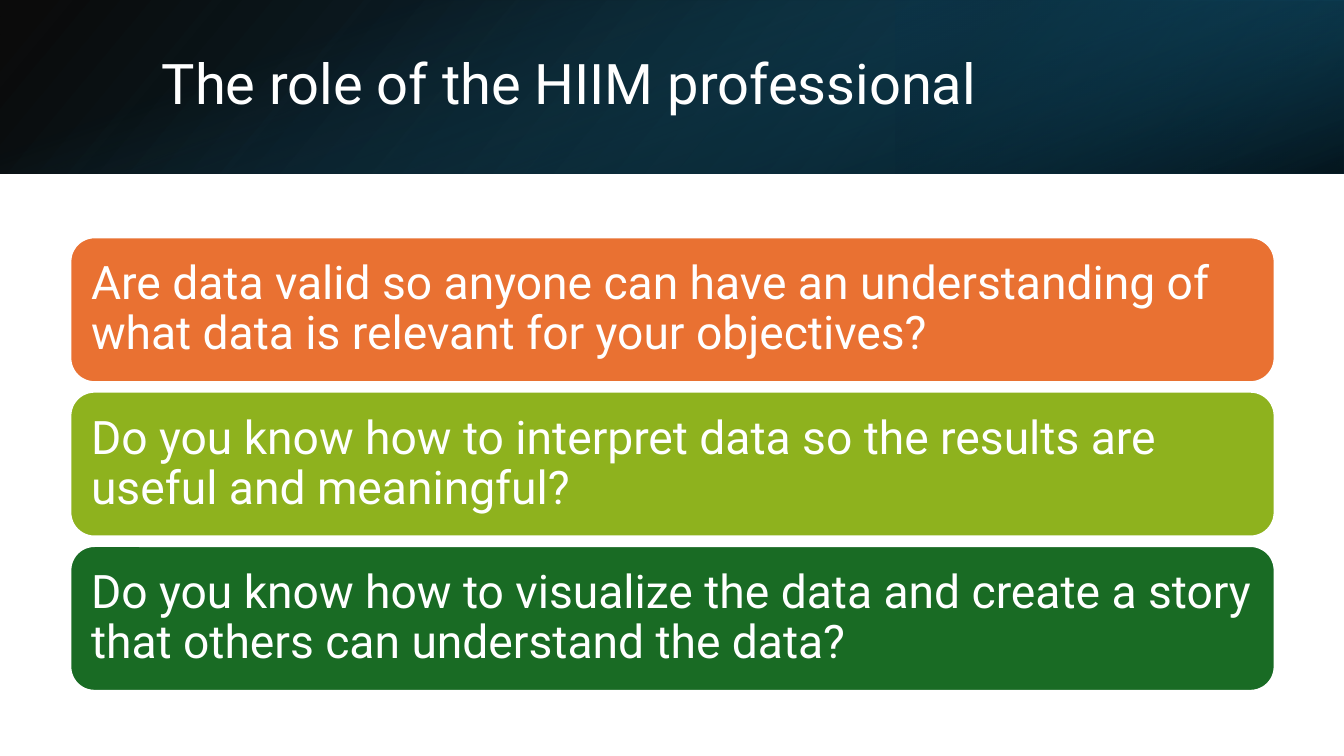
import pptx
import pptx.dml.color
import pptx.enum.shapes
import pptx.enum.text
import pptx.oxml.ns
import pptx.util
from lxml import etree

PX = 9525  # EMU per px, 96 px to the inch
WIDTH, HEIGHT = 1280, 720
FONT = "Roboto"
WHITE = "FFFFFF"
SHAPES = pptx.enum.shapes.MSO_SHAPE

QUESTIONS = [
    ("Are data valid so anyone can have an understanding of what data is relevant "
     "for your objectives?", "E97132"),
    ("Do you know how to interpret data so the results are useful and meaningful?",
     "8EB21E"),
    ("Do you know how to visualize the data and create a story that others can "
     "understand the data?", "196B24"),
]


def color(hex_string):
    return pptx.dml.color.RGBColor.from_string(hex_string)


def add_box(slide, kind, left, top, width, height):
    shape = slide.shapes.add_shape(kind, *(n * PX for n in (left, top, width, height)))
    shape.shadow.inherit = False
    return shape


def set_text(shape, text, size, inset_x, inset_y):
    frame = shape.text_frame
    frame.word_wrap = True
    frame.vertical_anchor = pptx.enum.text.MSO_ANCHOR.MIDDLE
    frame.margin_left = frame.margin_right = inset_x * PX
    frame.margin_top = frame.margin_bottom = inset_y * PX
    paragraph = frame.paragraphs[0]
    paragraph.text = text
    paragraph.alignment = pptx.enum.text.PP_ALIGN.LEFT
    paragraph.line_spacing = 0.9
    paragraph.font.name = FONT
    paragraph.font.size = pptx.util.Pt(size)
    paragraph.font.color.rgb = color(WHITE)


def add_gradient(slide, box, stops, angle, rotation=0, flip=False):
    """Fill a box with two stops of (position %, colour, opacity %), angle clockwise."""
    left, top, width, height = box
    if rotation == 90:  # the unturned frame shares the centre of the box
        left, top = left + (width - height) / 2, top + (height - width) / 2
        width, height = height, width
    shape = add_box(slide, SHAPES.RECTANGLE, *(int(n) for n in (left, top, width, height)))
    shape.rotation = rotation
    shape.line.fill.background()
    shape.fill.gradient()
    shape.fill.gradient_angle = 360 - angle
    properties = shape.element.spPr
    if flip:
        properties.find(pptx.oxml.ns.qn("a:xfrm")).set("flipH", "1")
    for gradient_stop, (position, hex_string, opacity) in zip(shape.fill.gradient_stops, stops):
        gradient_stop.position = position / 100
        gradient_stop.color.rgb = color(hex_string)
    for element, stop in zip(properties.iter(pptx.oxml.ns.qn("a:srgbClr")), stops):
        if stop[2] < 100:
            alpha = etree.SubElement(element, pptx.oxml.ns.qn("a:alpha"))
            alpha.set("val", str(stop[2] * 1000))


def add_header(slide, left, top, width, height):
    # Three layered gradients
    band = (left, top, width, height)
    right_third = (left + width - 427, top, 427, height)
    add_gradient(slide, band, [(0, "000000", 96), (100, "104862", 100)], 140, flip=True)
    add_gradient(slide, right_third, [(19, "0B3041", 68), (100, "156082", 79)], 320,
                 rotation=180, flip=True)
    add_gradient(slide, band, [(23, "156082", 0), (99, "000000", 74)], 340, rotation=90)

    # Title
    title = slide.shapes.add_textbox((left + 144) * PX, (top + 36) * PX, 1054 * PX, 92 * PX)
    set_text(title, "The role of the HIIM professional", 40, 10, 5)


def add_question_cards(slide, left, top, width, height, gap=9):
    card_height = (height - gap * (len(QUESTIONS) - 1)) // len(QUESTIONS)
    for index, (question, fill) in enumerate(QUESTIONS):
        card_top = top + index * (card_height + gap)
        card = add_box(slide, SHAPES.ROUNDED_RECTANGLE, left, card_top, width, card_height)
        card.fill.solid()
        card.fill.fore_color.rgb = color(fill)
        card.line.color.rgb = color(WHITE)
        card.line.width = pptx.util.Pt(1.5)
        set_text(card, question, 33, 13, 13)


def main():
    presentation = pptx.Presentation()
    presentation.slide_width, presentation.slide_height = WIDTH * PX, HEIGHT * PX
    slide = presentation.slides.add_slide(presentation.slide_layouts[6])
    add_header(slide, 0, 0, WIDTH, 165)
    add_question_cards(slide, 67, 226, 1147, 432)
    presentation.save("out.pptx")


if __name__ == "__main__":
    main()
